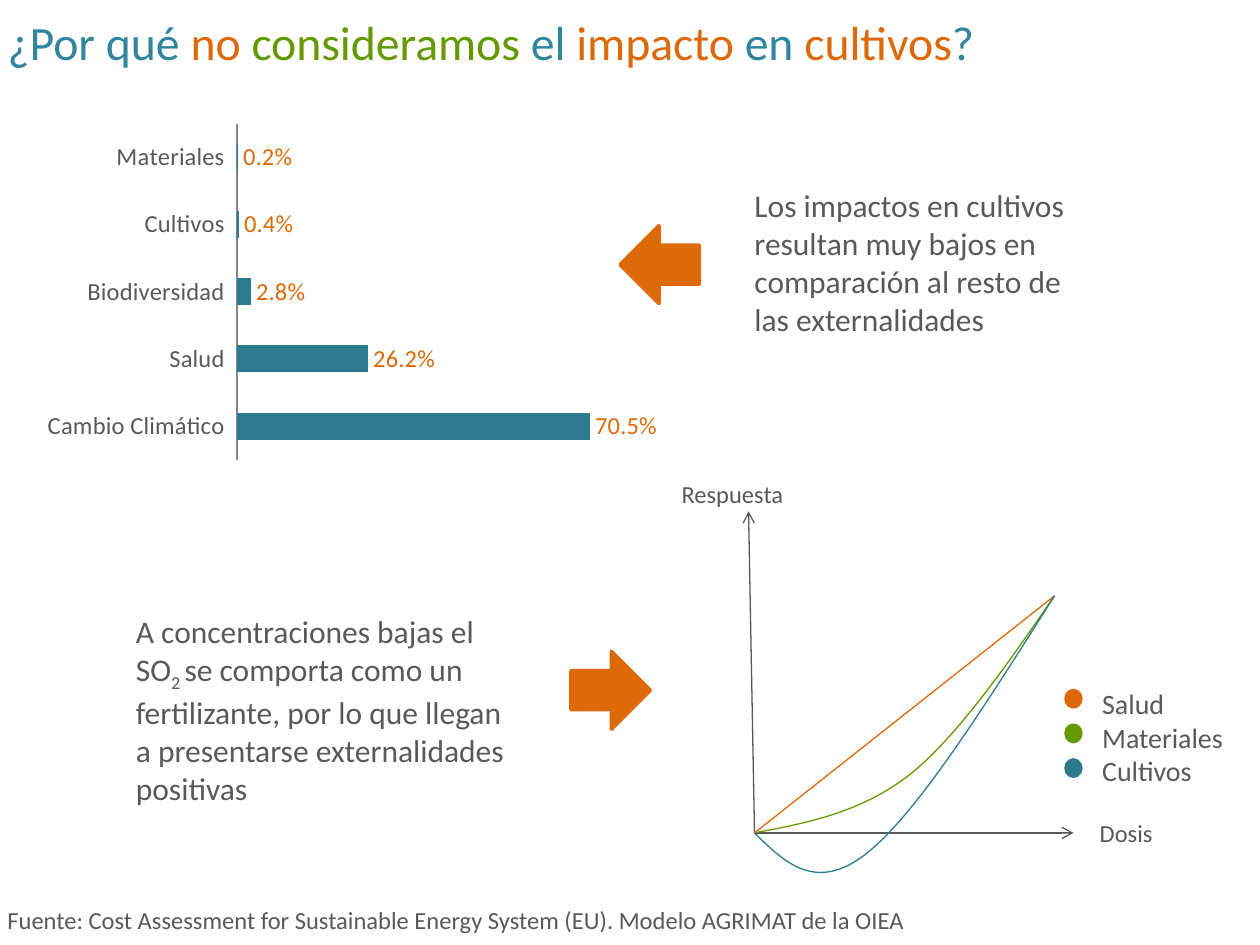
from lxml.etree import SubElement
from pptx import Presentation
from pptx.chart.data import CategoryChartData
from pptx.dml.color import RGBColor
from pptx.enum.chart import XL_CHART_TYPE as ChartType, XL_LABEL_POSITION as LabelPos
from pptx.enum.chart import XL_TICK_LABEL_POSITION as TickLabelPos, XL_TICK_MARK as TickMark
from pptx.enum.shapes import MSO_CONNECTOR as Connector, MSO_SHAPE as Shape
from pptx.enum.text import MSO_ANCHOR as Anchor, PP_ALIGN as Align
from pptx.oxml import parse_xml
from pptx.oxml.ns import nsdecls, qn
from pptx.util import Cm, Pt

FONT = "Calibri"
COLORS = {"text": "595959", "title": "31859C", "teal": "2D7A8F",
          "orange": "DD6909", "green": "669900", "axis": "868686"}


def rgb(name):
    return RGBColor.from_string(COLORS[name])


def style_font(font, size, color):
    font.name, font.size, font.color.rgb = FONT, Pt(size), rgb(color)


def fill_frame(frame, paragraphs, size):
    """Fill a text frame; each paragraph is a list of (text, color) runs."""
    frame.word_wrap = True
    frame.vertical_anchor = Anchor.TOP
    for index, runs in enumerate(paragraphs):
        paragraph = frame.add_paragraph() if index else frame.paragraphs[0]
        paragraph.alignment = Align.LEFT
        for text, color in runs:
            run = paragraph.add_run()
            run.text = text
            style_font(run.font, size, color)


def add_text(shapes, box, paragraphs, size):
    frame = shapes.add_textbox(*map(Cm, box)).text_frame
    fill_frame(frame, paragraphs, size)
    return frame


def add_solid(shapes, kind, box, color):
    shape = shapes.add_shape(kind, *map(Cm, box))
    shape.shadow.inherit = False
    shape.fill.solid()
    shape.fill.fore_color.rgb = shape.line.color.rgb = rgb(color)
    shape.line.width = Pt(2)
    return shape


def add_line(shapes, start, end, color, arrow=False):
    line = shapes.add_connector(Connector.STRAIGHT, *map(Cm, (*start, *end)))
    line.line.color.rgb = rgb(color)
    line.line.width = Pt(0.75)
    if arrow:
        SubElement(line.line._get_or_add_ln(), qn("a:tailEnd"), type="arrow")
    SubElement(line._element.spPr, qn("a:effectLst"))


def add_curve(shapes, points, color):
    """Draw a Bézier curve: a start, then two controls and an end per segment."""
    (x, y), *rest = points
    builder = shapes.build_freeform(Cm(x), Cm(y))
    builder.add_line_segments([(Cm(px), Cm(py)) for px, py in rest], close=False)
    curve = builder.convert_to_shape()
    steps = list(curve._element.iter(qn("a:lnTo")))
    for first in range(0, len(steps), 3):
        segment = steps[first:first + 3]
        bezier = SubElement(segment[0].getparent(), qn("a:cubicBezTo"))
        for step in segment:
            bezier.append(step[0])
            step.getparent().remove(step)
    curve.shadow.inherit = False
    curve.fill.background()
    curve.line.color.rgb = rgb(color)
    curve.line.width = Pt(0.75)


def place_title(slide, box):
    title = slide.shapes.title
    title.left, title.top, title.width, title.height = map(Cm, box)
    fill_frame(title.text_frame, [[
        ("¿Por qué ", "title"), ("no ", "orange"), ("consideramos", "green"),
        (" el ", "title"), ("impacto", "orange"), (" en ", "title"),
        ("cultivos", "orange"), ("?", "title")]], 27.3)


def place_impact_chart(slide, box):
    data = CategoryChartData(number_format="0.0%")
    data.categories = ["Cambio Climático", "Salud", "Biodiversidad", "Cultivos", "Materiales"]
    data.add_series("Series 1", [0.705, 0.262, 0.028, 0.004, 0.002])
    chart = slide.shapes.add_chart(ChartType.BAR_CLUSTERED, *map(Cm, box), data).chart
    chart.has_legend = chart.has_title = False
    chart.font.name, chart.font.size = FONT, Pt(10)

    categories, values = chart.category_axis, chart.value_axis
    categories.major_tick_mark = categories.minor_tick_mark = TickMark.NONE
    categories.tick_label_position = TickLabelPos.LOW
    categories.format.line.color.rgb = rgb("axis")
    style_font(categories.tick_labels.font, 14, "text")
    values.minimum_scale, values.maximum_scale = 0, 0.8
    values.has_major_gridlines = values.visible = False

    plot = chart.plots[0]
    plot.gap_width = 150
    plot.vary_by_categories = False
    bars = plot.series[0]
    bars.format.fill.solid()
    bars.format.fill.fore_color.rgb = rgb("teal")
    labels = bars.data_labels
    labels.show_value = True
    labels.number_format, labels.number_format_is_linked = "0.0%", False
    labels.position = LabelPos.OUTSIDE_END
    style_font(labels.font, 14, "orange")

    # Fixed inner plot area
    plot_area = chart._chartSpace.chart.plotArea
    for old in plot_area.findall(qn("c:layout")):
        plot_area.remove(old)
    sizes = "".join(f'<c:{tag} val="{value}"/>' for tag, value in (
        ("layoutTarget", "inner"), ("xMode", "edge"), ("yMode", "edge"),
        ("x", 0.33), ("y", 0.05), ("w", 0.62), ("h", 0.89)))
    plot_area.insert(0, parse_xml(
        f'<c:layout {nsdecls("c")}><c:manualLayout>{sizes}</c:manualLayout></c:layout>'))


def place_comment(slide, box, texts, arrow_offset, rotation=0):
    """Write a remark and the block arrow that links it to its chart."""
    left, top = box[:2]
    frame = add_text(slide.shapes, box, [[(text, "text") for text in texts]], 18)
    dx, dy = arrow_offset
    arrow = add_solid(slide.shapes, Shape.RIGHT_ARROW, (left + dx, top + dy, 1.6, 1.57), "orange")
    arrow.rotation = rotation
    return frame


def place_dose_graph(slide, box):
    left, top, _, _ = box
    shapes = slide.shapes.add_group_shape().shapes

    def at(x, y):
        return left + x, top + y

    origin, peak = at(1.72, 7.26), at(7.77, 2.48)
    # Axes
    add_line(shapes, origin, at(1.6, 0.78), "text", arrow=True)
    add_line(shapes, origin, at(8.15, 7.26), "text", arrow=True)
    # Responses: materials, health, crops
    add_curve(shapes, [origin, at(2.79, 7.06), at(3.88, 6.85), at(4.87, 6.07),
                       at(5.89, 5.25), at(7.03, 3.55), peak], "green")
    add_line(shapes, origin, peak, "orange")
    add_curve(shapes, [origin, at(2.31, 7.84), at(2.94, 8.48), at(3.96, 7.69),
                       at(4.98, 6.9), at(6.37, 4.69), peak], "teal")
    # Axis names
    add_text(shapes, (*at(0, 0), 3.15, 0.76), [[("Respuesta", "text")]], 14)
    add_text(shapes, (*at(8.43, 6.83), 2.18, 0.76), [[("Dosis", "text")]], 14)


def place_legend(slide, box):
    left, top, width, height = box
    entries = [("Salud", "orange"), ("Materiales", "green"), ("Cultivos", "teal")]
    add_text(slide.shapes, (left + 0.48, top, width - 0.48, height),
             [[(name, "text")] for name, _ in entries], 16)
    for row, (_, color) in enumerate(entries):
        add_solid(slide.shapes, Shape.OVAL, (left, top + 0.2 + 0.7 * row, 0.3, 0.33), color)


def main():
    deck = Presentation()
    deck.slide_width, deck.slide_height = Cm(25.4), Cm(19.05)
    slide = deck.slides.add_slide(deck.slide_layouts[5])

    add_text(slide.shapes, (-0.1, 18.11, 26.8, 0.86), [[(
        "Fuente: Cost Assessment for Sustainable Energy System (EU). "
        "Modelo AGRIMAT de la OIEA", "text")]], 14)
    place_title(slide, (-0.1, 0.13, 25.4, 2.77))
    place_impact_chart(slide, (0.48, 2.11, 13.03, 7.62))
    place_comment(slide, (14.96, 3.63, 6.81, 3.33), [
        "Los impactos en cultivos resultan muy bajos en comparación al resto de las externalidades"],
        (-2.46, 0.92), rotation=180)
    place_dose_graph(slide, (13.49, 9.53, 10.62, 8.5))
    place_legend(slide, (21.49, 13.72, 3.5, 2.36))
    fertilizer = place_comment(slide, (2.49, 12.22, 8, 4.11), [
        "A concentraciones bajas el SO", "2 ",
        "se comporta como un fertilizante, por lo que llegan a presentarse externalidades positivas"],
        (9.02, 0.91))
    # Subscript of SO2
    fertilizer.paragraphs[0].runs[1]._r.get_or_add_rPr().set("baseline", "-25000")
    deck.save("out.pptx")


if __name__ == "__main__":
    main()
